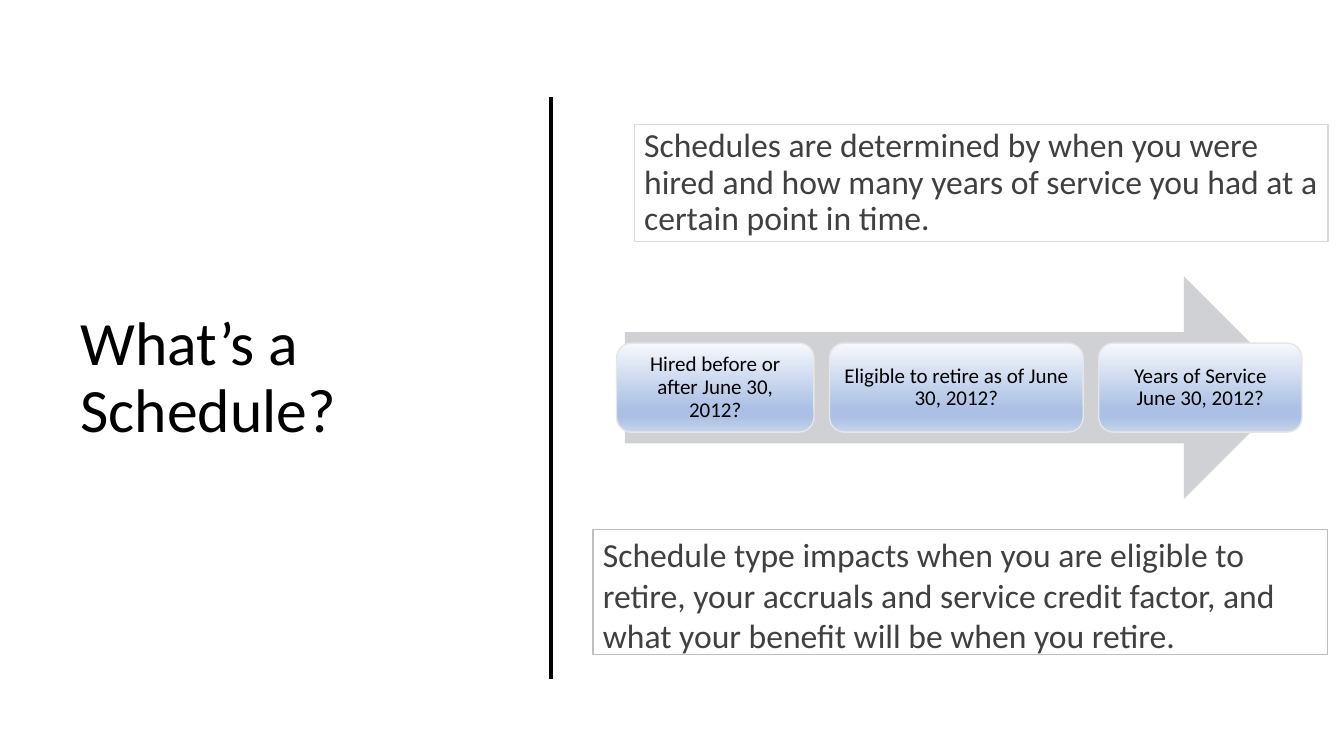
from pptx import Presentation
from pptx import util as u
from pptx.dml.color import RGBColor
from pptx.enum import shapes, text
from pptx.oxml import parse_xml
from pptx.oxml.ns import nsdecls, qn

WIDTH, HEIGHT = u.Inches(13.33), u.Inches(7.5)
COL, ROW = WIDTH / 16, HEIGHT / 9
STEPS = [
    (2.35, "Hired before or after June 30, 2012?"),
    (3.02, "Eligible to retire as of June 30, 2012?"),
    (2.42, "Years of Service\vJune 30, 2012?"),
]
STEP_STOPS = [(0, "F6F8FC"), (74, "ABC0E4"), (83, "ABC0E4"), (100, "C7D5ED")]


def color(hex_code):
    """Turn a hex string into a colour."""
    return RGBColor.from_string(hex_code)


def place(box):
    """Turn a box in grid columns and rows into slide lengths."""
    x, y, w, h = box
    return [round(v) for v in (x * COL, y * ROW, w * COL, h * ROW)]


def write(sp, content, size=24, ink="404040", align=text.PP_ALIGN.LEFT,
          anchor=text.MSO_ANCHOR.MIDDLE, spacing=0.9, before=0, inset=0.1):
    """Put one formatted paragraph into a shape."""
    tf = sp.text_frame
    tf.word_wrap = True
    tf.vertical_anchor = anchor
    tf.margin_left = tf.margin_right = u.Inches(inset)
    tf.margin_top = tf.margin_bottom = u.Inches(0.05)
    p = tf.paragraphs[0]
    p.text = content
    p.alignment = align
    p.line_spacing = spacing
    p.space_before = u.Pt(before)
    for r in p.runs:
        r.font.name = "Calibri"
        r.font.size = u.Pt(size)
        r.font.color.rgb = color(ink)


def add_block(s, kind, box, fill=None, line=None, weight=0.75):
    """Add a flat preset shape with an optional fill and outline."""
    sp = s.shapes.add_shape(kind, *place(box))
    sp.shadow.inherit = False
    if fill:
        sp.fill.solid()
        sp.fill.fore_color.rgb = color(fill)
    else:
        sp.fill.background()
    if line:
        sp.line.color.rgb = color(line)
        sp.line.width = u.Pt(weight)
    else:
        sp.line.fill.background()
    return sp


def shade(sp, stops):
    """Fill a shape with a gradient running from top to bottom."""
    sp.fill.gradient()
    sp.fill.gradient_angle = 270
    stop_list = sp._element.spPr.find(qn("a:gradFill")).find(qn("a:gsLst"))
    for old in list(stop_list):
        stop_list.remove(old)
    for percent, hex_code in stops:
        stop_list.append(parse_xml(
            f'<a:gs {nsdecls("a")} pos="{percent * 1000}">'
            f'<a:srgbClr val="{hex_code}"/></a:gs>'))


def add_title(s, box, content):
    """Add the slide title."""
    write(s.shapes.add_textbox(*place(box)), content, size=44, ink="000000")


def add_note(s, box, content, line, **fmt):
    """Add an outlined box of explanation."""
    sp = add_block(s, shapes.MSO_SHAPE.RECTANGLE, box, line=line)
    write(sp, content, **fmt)


def add_flow(s, box, steps):
    """Add the wide arrow and the row of steps lying on it."""
    x, y, w, h = box
    add_block(s, shapes.MSO_SHAPE.RIGHT_ARROW, (x + 0.1, y, w - 0.18, h),
              fill="CFD1D4")
    gap = (w - sum(width for width, _ in steps)) / (len(steps) - 1)
    for width, content in steps:
        sp = add_block(s, shapes.MSO_SHAPE.ROUNDED_RECTANGLE,
                       (x, y + 0.3 * h, width, 0.4 * h), line="E7E6E6", weight=1)
        shade(sp, STEP_STOPS)
        write(sp, content, size=15, ink="000000",
              align=text.PP_ALIGN.CENTER, inset=0.09)
        x += width + gap


def add_divider(s, box):
    """Add the upright rule between title and content."""
    x, y, w, h = place(box)
    rule = s.shapes.add_connector(shapes.MSO_CONNECTOR.STRAIGHT,
                                  x, y, x + w, y + h)
    rule.line.color.rgb = color("000000")
    rule.line.width = u.Pt(3)
    rule._element.spPr.append(parse_xml(f'<a:effectLst {nsdecls("a")}/>'))


def main():
    """Build the slide and save it."""
    prs = Presentation()
    prs.slide_width, prs.slide_height = WIDTH, HEIGHT
    s = prs.slides.add_slide(prs.slide_layouts[6])
    add_title(s, (0.84, 2.7, 4.81, 3.62), "What’s a Schedule?")
    add_note(s, (7.55, 1.48, 8.26, 1.4),
             "Schedules are determined by when you were hired and how many "
             "years of service you had at a certain point in time.",
             "D9D9D9", before=12)
    add_note(s, (7.06, 6.3, 8.75, 1.49),
             "Schedule type impacts when you are eligible to retire, your "
             "accruals and service credit factor, and what your benefit will "
             "be when you retire.",
             "BFBFBF", anchor=text.MSO_ANCHOR.TOP, spacing=1.0, before=4.8)
    add_flow(s, (7.34, 3.29, 8.16, 2.65), STEPS)
    add_divider(s, (6.56, 1.16, 0, 6.92))
    prs.save("out.pptx")


if __name__ == "__main__":
    main()
